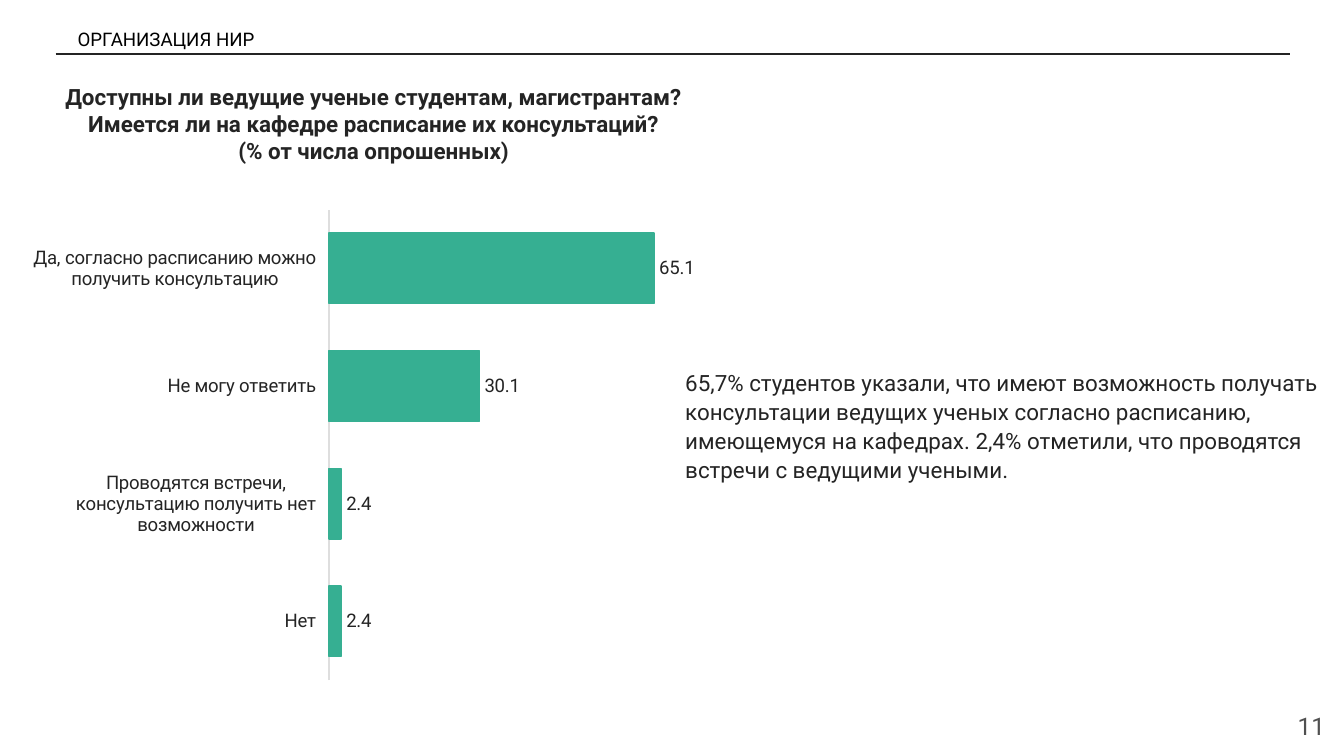
from lxml import etree
from pptx import Presentation
from pptx.chart.data import CategoryChartData
from pptx.dml.color import RGBColor
from pptx.enum.chart import XL_CHART_TYPE, XL_LABEL_POSITION, XL_TICK_LABEL_POSITION, XL_TICK_MARK
from pptx.enum.shapes import MSO_CONNECTOR
from pptx.enum.text import MSO_ANCHOR, MSO_AUTO_SIZE, PP_ALIGN
from pptx.oxml import parse_xml
from pptx.oxml.ns import nsdecls, qn
from pptx.util import Cm, Pt

BAR = XL_CHART_TYPE.BAR_CLUSTERED
OUTSIDE = XL_LABEL_POSITION.OUTSIDE_END
LABELS_LOW = XL_TICK_LABEL_POSITION.LOW
NO_TICK = XL_TICK_MARK.NONE
STRAIGHT = MSO_CONNECTOR.STRAIGHT
TOP = MSO_ANCHOR.TOP
NO_FIT = MSO_AUTO_SIZE.NONE
LEFT, CENTER, RIGHT = PP_ALIGN.LEFT, PP_ALIGN.CENTER, PP_ALIGN.RIGHT

FONT = "Roboto"
BLACK = RGBColor(0x00, 0x00, 0x00)
DARK = RGBColor(0x24, 0x24, 0x24)
GREY = RGBColor(0x50, 0x50, 0x50)
AXIS = RGBColor(0xDE, 0xDE, 0xDE)
GREEN = RGBColor(0x36, 0xAF, 0x92)

ANSWERS = [
    ("Нет", 2.4),
    ("Проводятся встречи, консультацию получить нет возможности", 2.4),
    ("Не могу ответить", 30.1),
    ("Да, согласно расписанию можно получить консультацию", 65.1),
]


def style_font(font, size, color, bold=False):
    """Set the face, size, colour and weight of a font."""
    font.name, font.size, font.bold = FONT, Pt(size), bold
    font.color.rgb = color


def place(s, x, y, w, h):
    """Move a shape to a box given in centimetres."""
    s.left, s.top, s.width, s.height = Cm(x), Cm(y), Cm(w), Cm(h)


def write(s, lines, size, color, align=LEFT, bold=False, inset=0.25, spacing=1.0):
    """Fill a shape with one plain paragraph per line and return them."""
    tf = s.text_frame
    tf.word_wrap, tf.auto_size, tf.vertical_anchor = True, NO_FIT, TOP
    tf.margin_left = tf.margin_right = Cm(0.25)
    tf.margin_top = tf.margin_bottom = Cm(inset)
    for i, line in enumerate(lines):
        p = tf.add_paragraph() if i else tf.paragraphs[0]
        p.alignment, p.line_spacing, p.space_before = align, spacing, Pt(0)
        r = p.add_run()
        r.text = line
        style_font(r.font, size, color, bold)
    return tf.paragraphs


def set_indent(p, left):
    """Give a paragraph a left margin in centimetres and no bullet."""
    pPr = p._p.get_or_add_pPr()
    pPr.set("marL", str(Cm(left)))
    pPr.set("indent", "0")
    etree.SubElement(pPr, qn("a:buNone"))


def add_header(slide, x, y, w, h):
    """Add the section name above a full-width rule."""
    rule = slide.shapes.add_connector(STRAIGHT, Cm(x), Cm(y + h), Cm(x + w), Cm(y + h))
    rule.line.color.rgb = DARK
    rule.line.width = Pt(0.75)
    etree.SubElement(rule._element.spPr, qn("a:effectLst"))
    s = slide.shapes.add_textbox(Cm(x + 0.17), Cm(y), Cm(9.68), Cm(h))
    write(s, ["ОРГАНИЗАЦИЯ НИР"], 10, BLACK, inset=0.13)


def add_question(slide, x, y, w, h):
    """Put the survey question in the title placeholder."""
    s = slide.shapes.title
    place(s, x, y, w, h)
    lines = [
        "Доступны ли ведущие ученые студентам, магистрантам? "
        "Имеется ли на кафедре расписание их консультаций?",
        "(% от числа опрошенных)",
    ]
    for p in write(s, lines, 12, DARK, CENTER, bold=True):
        set_indent(p, 0.18)


def add_comment(slide, x, y, w, h):
    """Put the conclusion in the body placeholder."""
    s = slide.placeholders[1]
    place(s, x, y, w, h)
    text = (
        "65,7% студентов указали, что имеют возможность получать консультации "
        "ведущих ученых согласно расписанию, имеющемуся на кафедрах. "
        "2,4% отметили, что проводятся встречи с ведущими учеными."
    )
    for p in write(s, [text], 12, DARK, spacing=1.08):
        set_indent(p, 0)


def set_plot_box(chart, x, y, w, h):
    """Fix the inner plot area as fractions of the chart."""
    parts = "".join(
        f'<c:{tag} val="{val}"/>'
        for tag, val in [("layoutTarget", "inner"), ("xMode", "edge"), ("yMode", "edge"),
                         ("x", x), ("y", y), ("w", w), ("h", h)]
    )
    layout = parse_xml(f'<c:layout {nsdecls("c")}><c:manualLayout>{parts}</c:manualLayout></c:layout>')
    area = chart._chartSpace.chart.plotArea
    for old in area.findall(qn("c:layout")):
        area.remove(old)
    area.insert(0, layout)


def add_answers_chart(slide, x, y, w, h):
    """Add the bar chart of answers."""
    data = CategoryChartData(number_format="0.0")
    data.categories = [name for name, _ in ANSWERS]
    data.add_series("Series 1", [value for _, value in ANSWERS])
    chart = slide.shapes.add_chart(BAR, Cm(x), Cm(y), Cm(w), Cm(h), data).chart
    chart.has_legend = chart.has_title = False
    style_font(chart.font, 10, DARK)
    set_plot_box(chart, 0.45, 0.09, 0.53, 0.9)

    cats, vals = chart.category_axis, chart.value_axis
    cats.major_tick_mark = cats.minor_tick_mark = NO_TICK
    cats.tick_label_position = LABELS_LOW
    cats.format.line.color.rgb = AXIS
    cats.format.line.width = Pt(0.75)
    style_font(cats.tick_labels.font, 10, DARK)
    vals.visible = vals.has_major_gridlines = False
    vals.minimum_scale, vals.maximum_scale = 0, 70

    plot = chart.plots[0]
    plot.gap_width, plot.vary_by_categories = 66, False
    bars = plot.series[0].format
    bars.fill.solid()
    bars.fill.fore_color.rgb = bars.line.color.rgb = GREEN
    bars.line.width = Pt(0.75)
    plot.has_data_labels = True
    labels = plot.data_labels
    labels.show_value, labels.position = True, OUTSIDE
    style_font(labels.font, 10, DARK)


def add_page_number(slide, x, y, w, h):
    """Add the page number in the corner."""
    s = slide.shapes.add_textbox(Cm(x), Cm(y), Cm(w), Cm(h))
    write(s, ["11"], 13, GREY, RIGHT)


def main():
    """Build the slide and save it."""
    prs = Presentation()
    prs.slide_width, prs.slide_height = Cm(25.4), Cm(14.28)
    slide = prs.slides.add_slide(prs.slide_layouts[1])
    add_header(slide, 1.05, 0.4, 23.33, 0.62)
    add_question(slide, 0.51, 1.32, 12.93, 2.06)
    add_answers_chart(slide, 0.61, 3.07, 12.52, 9.88)
    add_comment(slide, 12.7, 6.68, 12.7, 6.81)
    add_page_number(slide, 23.77, 13.18, 1.52, 1.09)
    prs.save("out.pptx")


if __name__ == "__main__":
    main()
